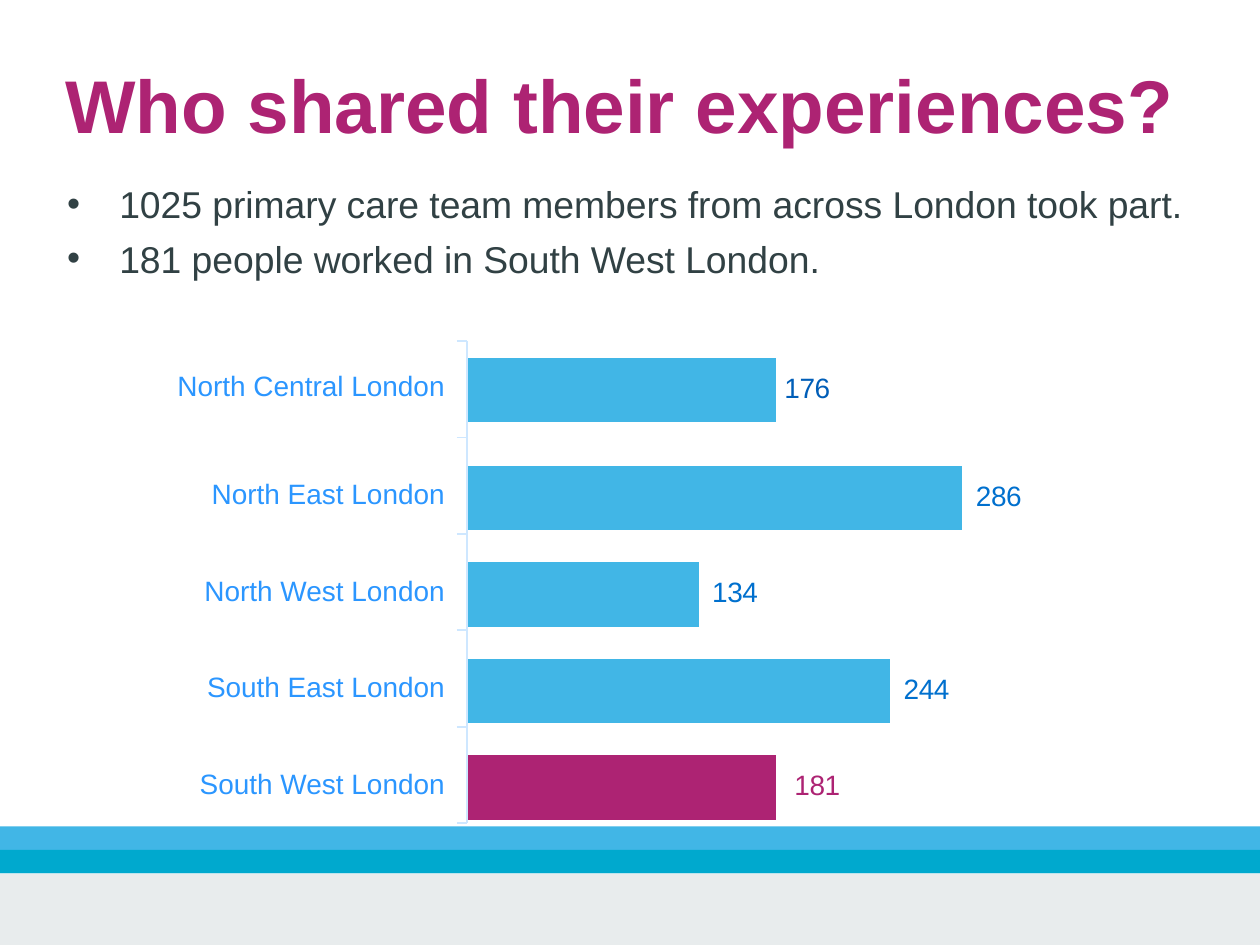
from lxml import etree
from pptx import Presentation
from pptx.dml.color import RGBColor
from pptx.enum.shapes import MSO_CONNECTOR as CONN, MSO_SHAPE as SHAPE
from pptx.enum.text import MSO_ANCHOR as ANCHOR, MSO_AUTO_SIZE as FIT, PP_ALIGN as ALIGN
from pptx.oxml.ns import qn
from pptx.util import Inches, Pt

WIDTH = 7.5
HEIGHT = WIDTH * 3 / 4
BLUE, PINK, LABEL, AXIS = "41B6E6", "AD2373", "2B96FF", "CEE7FF"
NO_STYLE = "{2D5ABB26-0587-4C30-8999-92F81FD0307C}"
BULLETS = [
    ("1025 primary care team members from across London took part.", 5),
    ("181 people worked in South West London.", 4.1),
]
COLUMNS = [1.77, 1.38, 0.46, 0.68, 0.43, 0.4]
PITCH = 2.3 / 4
BAR_ROW, GAP_ROW, FIRST_GAP = PITCH * 2 / 3, PITCH / 3, 0.26
REGIONS = [
    ("North Central London", "176", 2, BLUE, "005EB8", 0.05),
    ("North East London", "286", 4, BLUE, "0070CE", 0.08),
    ("North West London", "134", 1, BLUE, "0070CE", 0.08),
    ("South East London", "244", 3, BLUE, "0070CE", 0.08),
    ("South West London", "181", 2, PINK, PINK, 0.11),
]


def rgb(value):
    return RGBColor.from_string(value)


def set_all(target, values):
    for name, value in values.items():
        setattr(target, name, value)


def write(p, text, size, color, bold=False, spacing=0):
    r = p.add_run()
    r.text = text
    set_all(r.font, {"name": "Arial", "size": Pt(size), "bold": bold})
    r.font.color.rgb = rgb(color)
    if spacing:
        r._r.get_or_add_rPr().set("spc", str(spacing))


def setup_frame(tf, left, top):
    set_all(tf, {"word_wrap": True, "auto_size": FIT.NONE, "vertical_anchor": ANCHOR.TOP,
                 "margin_left": Inches(left), "margin_right": 0, "margin_bottom": 0,
                 "margin_top": Inches(top)})


def add_title(s, x, y, w, h):
    sp = s.shapes.title
    set_all(sp, {"left": Inches(x), "top": Inches(y), "width": Inches(w), "height": Inches(h)})
    setup_frame(sp.text_frame, 0.01, 0.02)
    p = sp.text_frame.paragraphs[0]
    set_all(p, {"alignment": ALIGN.LEFT, "space_before": Pt(1.1)})
    write(p, "Who shared their experiences?", 32, PINK, True)


def add_bullets(s, x, y, w, h):
    tf = s.shapes.add_textbox(Inches(x), Inches(y), Inches(w), Inches(h)).text_frame
    setup_frame(tf, 0, 0.07)
    for i, (text, before) in enumerate(BULLETS):
        p = tf.add_paragraph() if i else tf.paragraphs[0]
        p.space_before = Pt(before)
        pPr = p._p.get_or_add_pPr()
        pPr.set("marL", str(Inches(0.33)))
        pPr.set("indent", str(-Inches(0.31)))
        etree.SubElement(pPr, qn("a:buFont")).set("typeface", "Arial")
        etree.SubElement(pPr, qn("a:buChar")).set("char", "•")
        write(p, text, 16, "314144")


def clear_cell(cell):
    set_all(cell, {"margin_left": 0, "margin_right": 0, "margin_top": 0, "margin_bottom": 0})
    cell.fill.background()
    cell.text_frame.paragraphs[0]._p.get_or_add_endParaRPr().set("sz", "800")


def add_bar_table(s, x, y):
    rows = [GAP_ROW if i % 2 else BAR_ROW for i in range(2 * len(REGIONS) - 1)]
    rows[1] = FIRST_GAP
    table = s.shapes.add_table(len(rows), len(COLUMNS), Inches(x), Inches(y),
                               Inches(sum(COLUMNS)), Inches(sum(rows))).table
    set_all(table, {"first_row": False, "horz_banding": False})
    table._tbl.tblPr.find(qn("a:tableStyleId")).text = NO_STYLE
    for column, width in zip(table.columns, COLUMNS):
        column.width = Inches(width)
    for row, height in zip(table.rows, rows):
        row.height = Inches(height)
        for cell in row.cells:
            clear_cell(cell)
    table.cell(0, 4).merge(table.cell(1, 5))
    for i, (region, count, span, fill, color, indent) in enumerate(REGIONS):
        label, value = table.cell(2 * i, 0), table.cell(2 * i, span + 1)
        set_all(label, {"margin_top": Inches(0.08), "margin_right": Inches(0.13)})
        set_all(value, {"margin_top": Inches(0.09), "margin_left": Inches(indent)})
        p = label.text_frame.paragraphs[0]
        p.alignment = ALIGN.RIGHT
        write(p, region, 12, LABEL)
        write(value.text_frame.paragraphs[0], count, 12, color, spacing=-20)
        for column in range(1, span + 1):
            bar = table.cell(2 * i, column).fill
            bar.solid()
            bar.fore_color.rgb = rgb(fill)


def add_line(s, x1, y1, x2, y2):
    line = s.shapes.add_connector(CONN.STRAIGHT, Inches(x1), Inches(y1), Inches(x2), Inches(y2))
    line.line.color.rgb = rgb(AXIS)
    line.line.width = Pt(0.75)
    etree.SubElement(line._element.spPr, qn("a:effectLst"))


def add_axis(s, x, y, w, h):
    add_line(s, x + w, y, x + w, y + h)
    for i in range(len(REGIONS) + 1):
        tick = y + h * i / len(REGIONS)
        add_line(s, x, tick, x + w, tick)


def add_footer(s, y, w, h):
    band = 0.14
    for height, color in [(band, BLUE), (band, "00A9CE"), (h - 2 * band, "E8ECED")]:
        sp = s.shapes.add_shape(SHAPE.RECTANGLE, 0, Inches(y), Inches(w), Inches(height))
        sp.shadow.inherit = False
        sp.fill.solid()
        sp.fill.fore_color.rgb = rgb(color)
        sp.line.fill.background()
        y += height


def main():
    prs = Presentation()
    set_all(prs, {"slide_width": Inches(WIDTH), "slide_height": Inches(HEIGHT)})
    s = prs.slides.add_slide(prs.slide_layouts[5])
    add_title(s, 0.38, 0.33, 6.62, 0.56)
    add_bullets(s, 0.38, 1.01, 6.69, 0.68)
    add_bar_table(s, 1.01, 2.13)
    add_footer(s, 4.92, WIDTH, HEIGHT - 4.92)
    add_axis(s, 2.72, 2.03, 0.06, 2.87)
    prs.save("out.pptx")


if __name__ == "__main__":
    main()
